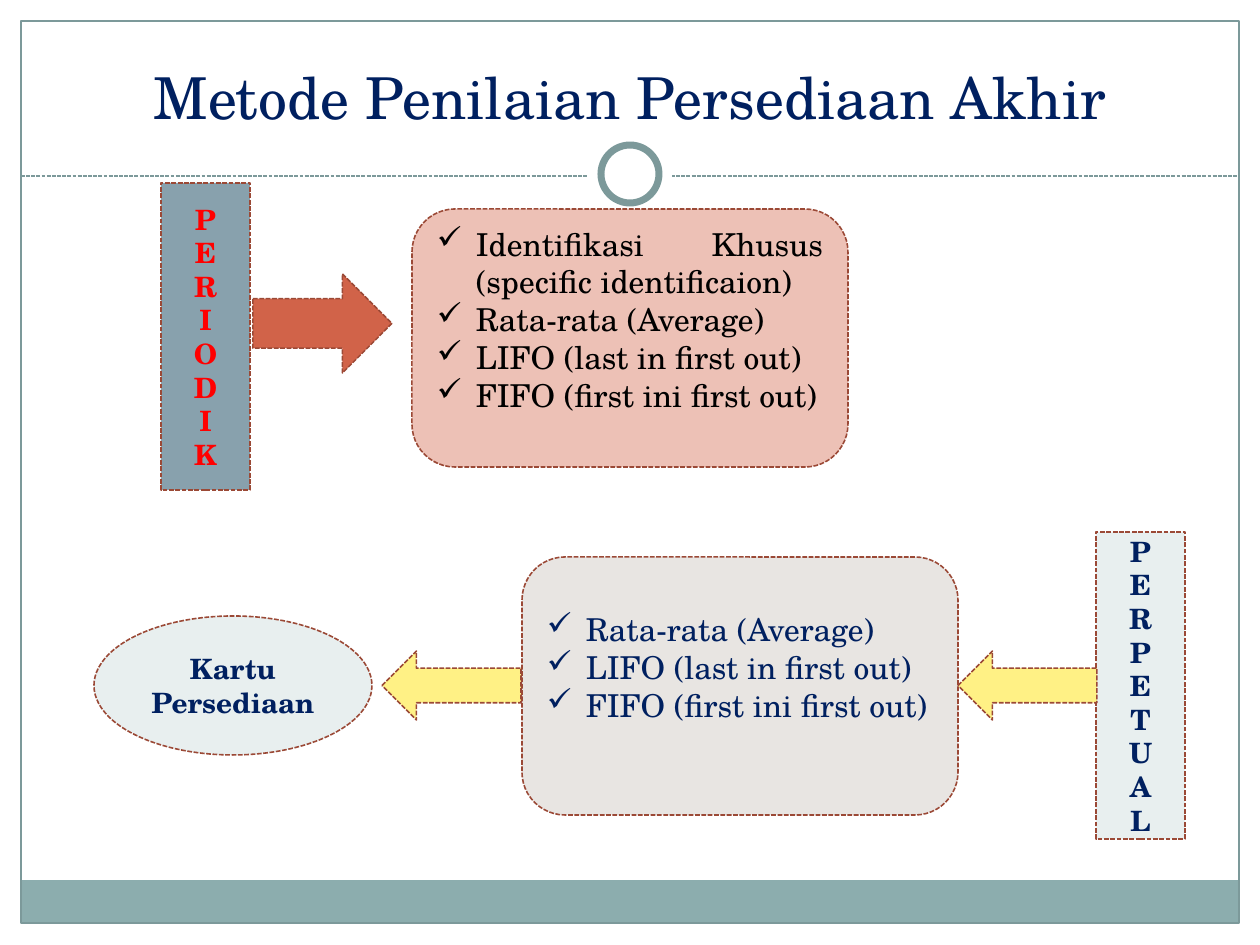
from lxml import etree
from pptx import Presentation
from pptx import util as u
from pptx.dml.color import RGBColor
from pptx.enum import dml, shapes, text
from pptx.oxml import ns

FONT = "TeX Gyre Schola"
WHITE = RGBColor(0xFF, 0xFF, 0xFF)
BLACK = RGBColor(0x00, 0x00, 0x00)
NAVY = RGBColor(0x00, 0x20, 0x60)
RED = RGBColor(0xFF, 0x00, 0x00)
TEAL = RGBColor(0x8C, 0xAD, 0xAE)
FRAME = RGBColor(0x7C, 0x99, 0x9A)
RUST = RGBColor(0x9B, 0x49, 0x36)
ORANGE = RGBColor(0xD1, 0x63, 0x49)
YELLOW = RGBColor(0xFF, 0xF1, 0x85)
STEEL = RGBColor(0x88, 0xA1, 0xAD)
MIST = RGBColor(0xE8, 0xEF, 0xEF)
PINK = RGBColor(0xED, 0xC1, 0xB6)
SAND = RGBColor(0xE8, 0xE5, 0xE2)

KIND = shapes.MSO_SHAPE
METHODS = ["Rata-rata (Average)", "LIFO (last in first out)", "FIFO (first ini first out)"]
LABEL_SIZE = (89, 307)
LIST_SIZE = (436, 258)


def px(length):
    """Turn px into EMU."""
    return u.Emu(round(length * 914400 / 126))


def add_shape(slide, kind, box, fill=None, line=None, width=0.9, dash=None):
    """Add a flat preset shape at box (left, top, width, height)."""
    shape = slide.shapes.add_shape(kind, *map(px, box))
    shape.shadow.inherit = False
    if fill is None:
        shape.fill.background()
    else:
        shape.fill.solid()
        shape.fill.fore_color.rgb = fill
    if line is None:
        shape.line.fill.background()
    else:
        shape.line.color.rgb = line
        shape.line.width = u.Pt(width)
        shape.line.dash_style = dash
    return shape


def add_dashed(slide, kind, box, fill):
    """Add a shape with the dashed rust outline of the diagram."""
    return add_shape(slide, kind, box, fill, RUST, dash=dml.MSO_LINE.SQUARE_DOT)


def add_bullet(paragraph):
    """Give a paragraph a check mark with a hanging indent."""
    properties = paragraph._p.get_or_add_pPr()
    properties.set("marL", str(px(39)))
    properties.set("indent", str(-px(39)))
    etree.SubElement(properties, ns.qn("a:buChar")).set("char", "✓")


def write(shape, lines, size, color, bold=False, checks=False):
    """Write one paragraph per line into a shape."""
    frame = shape.text_frame
    frame.word_wrap = True
    frame.vertical_anchor = text.MSO_ANCHOR.MIDDLE
    for index, line in enumerate(lines):
        paragraph = frame.add_paragraph() if index else frame.paragraphs[0]
        paragraph.alignment = text.PP_ALIGN.JUSTIFY if checks else text.PP_ALIGN.CENTER
        if checks:
            add_bullet(paragraph)
        run = paragraph.add_run()
        run.text = line
        run.font.name = FONT
        run.font.size = u.Pt(size)
        run.font.bold = bold
        run.font.color.rgb = color


def add_label(slide, left, top, word, fill, color):
    """Add a tall box with one letter per line."""
    label = add_dashed(slide, KIND.RECTANGLE, (left, top, *LABEL_SIZE), fill)
    write(label, word, 16, color, bold=True)


def add_list(slide, left, top, lines, fill, color):
    """Add a rounded box with a checked list set above its middle."""
    panel = add_dashed(slide, KIND.ROUNDED_RECTANGLE, (left, top, *LIST_SIZE), fill)
    panel.text_frame.margin_bottom = px(44)
    write(panel, lines, 18, color, checks=True)


def add_frame(slide, left, top, width, height):
    """Draw the border, the footer band, the divider and its ring."""
    add_shape(slide, KIND.RECTANGLE, (left, top + height - 43, width, 43), TEAL)
    add_shape(slide, KIND.RECTANGLE, (left, top, width, height), line=FRAME, width=0.75)
    middle, divider = left + width // 2, top + 155
    line = slide.shapes.add_connector(
        shapes.MSO_CONNECTOR.STRAIGHT, px(left), px(divider), px(left + width), px(divider))
    line.line.color.rgb = FRAME
    line.line.width = u.Pt(0.75)
    line.line.dash_style = dml.MSO_LINE.SQUARE_DOT
    etree.SubElement(line._element.spPr, ns.qn("a:effectLst"))
    for radius, outline in ((42, None), (29, FRAME)):
        box = (middle - radius, divider - 2 - radius, 2 * radius, 2 * radius)
        add_shape(slide, KIND.OVAL, box, WHITE, outline, 4)


def add_title(slide, left, top, width, height):
    """Place and format the title placeholder."""
    title = slide.shapes.title
    title.left, title.top, title.width, title.height = map(px, (left, top, width, height))
    write(title, ["Metode Penilaian Persediaan Akhir"], 33, NAVY)
    title.text_frame.auto_size = text.MSO_AUTO_SIZE.NONE
    title.text_frame.vertical_anchor = text.MSO_ANCHOR.BOTTOM


def add_periodic(slide, left, top):
    """Draw the periodic method: label, arrow and list."""
    add_label(slide, left, top, "PERIODIK", STEEL, RED)
    lines = ["Identifikasi Khusus (specific identificaion)", *METHODS]
    add_list(slide, left + 251, top + 26, lines, PINK, BLACK)
    add_dashed(slide, KIND.RIGHT_ARROW, (left + 92, top + 91, 139, 99), ORANGE)


def add_perpetual(slide, left, top):
    """Draw the perpetual method: label, list and stock card, right to left."""
    add_label(slide, left + 1002, top, "PERPETUAL", MIST, NAVY)
    add_list(slide, left + 428, top + 25, METHODS, SAND, NAVY)
    card = add_dashed(slide, KIND.OVAL, (left, top + 84, 278, 139), MIST)
    write(card, ["Kartu Persediaan"], 16, NAVY, bold=True)
    for offset in (864, 288):
        add_dashed(slide, KIND.LEFT_ARROW, (left + offset, top + 119, 139, 69), YELLOW)


def main():
    """Build the slide and save it."""
    presentation = Presentation()
    presentation.slide_width, presentation.slide_height = px(1260), px(945)
    slide = presentation.slides.add_slide(presentation.slide_layouts[5])
    add_frame(slide, 21, 21, 1218, 902)
    add_title(slide, 42, 32, 1176, 105)
    add_periodic(slide, 161, 183)
    add_perpetual(slide, 94, 532)
    presentation.save("out.pptx")


if __name__ == "__main__":
    main()
